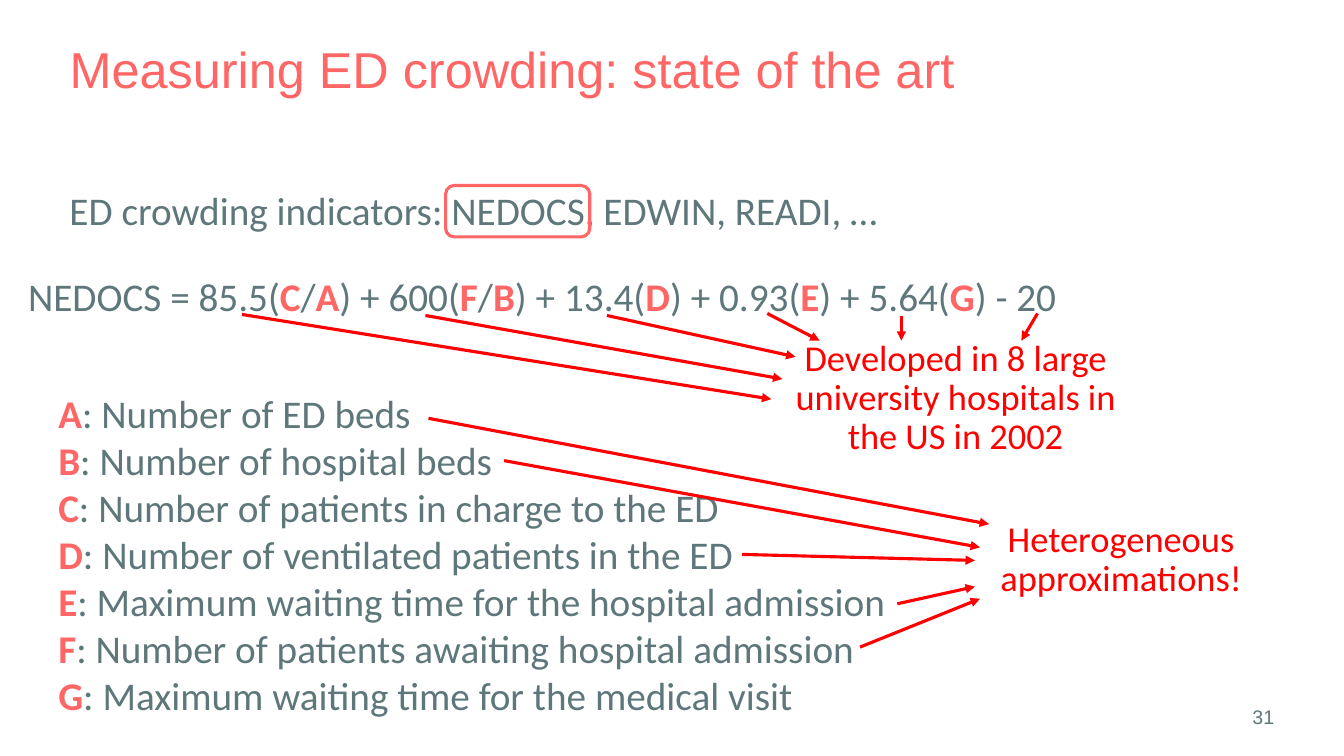
from lxml.etree import SubElement
from pptx import Presentation
from pptx.dml.color import RGBColor
from pptx.enum.shapes import MSO_CONNECTOR, MSO_SHAPE
from pptx.enum.text import MSO_ANCHOR, MSO_AUTO_SIZE, PP_ALIGN
from pptx.oxml.ns import qn
from pptx.util import Inches, Pt

CORAL = "FF6666"
SLATE = "5E777A"
RED = "FF0000"

INDICATORS = "ED crowding indicators: NEDOCS, EDWIN, READI, …"
FORMULA = (
    "NEDOCS = 85.5(*C*/*A*) + 600(*F*/*B*) + 13.4(*D*)"
    " + 0.93(*E*) + 5.64(*G*) - 20"
)
VARIABLES = {
    "A": "Number of ED beds",
    "B": "Number of hospital beds",
    "C": "Number of patients in charge to the ED",
    "D": "Number of ventilated patients in the ED",
    "E": "Maximum waiting time for the hospital admission",
    "F": "Number of patients awaiting hospital admission",
    "G": "Maximum waiting time for the medical visit",
}
COEFFICIENT_ARROWS = [
    ((-5.25, -0.2), (0, 0.64)),
    ((-3.43, -0.19), (0.11, 0.44)),
    ((-1.63, -0.19), (0.24, 0.22)),
    ((-0.04, -0.21), (0.48, 0.06)),
    ((1.29, -0.18), (1.29, 0.06)),
    ((2.64, -0.21), (2.48, 0.06)),
]
VARIABLE_ARROWS = [
    ((-5.42, -0.97), (0.14, 0.08)),
    ((-4.67, -0.55), (0.05, 0.31)),
    ((-2.31, 0.38), (0, 0.44)),
    ((-0.77, 0.87), (0, 0.7)),
    ((-1.14, 1.3), (0.05, 0.82)),
]


def colour(code):
    return RGBColor.from_string(code)


def write(box, text, size=28, font="Calibri", fill=SLATE, align=PP_ALIGN.LEFT, spacing=1.0):
    frame = box.text_frame
    frame.word_wrap = True
    frame.auto_size = MSO_AUTO_SIZE.NONE
    frame.vertical_anchor = MSO_ANCHOR.TOP
    for index, line in enumerate(text.split("\n")):
        para = frame.add_paragraph() if index else frame.paragraphs[0]
        para.alignment = align
        para.line_spacing = spacing
        for position, piece in enumerate(line.split("*")):
            if not piece:
                continue
            marked = position % 2 == 1
            span = para.add_run()
            span.text = piece
            span.font.name = font
            span.font.size = Pt(size)
            span.font.bold = marked
            span.font.color.rgb = colour(CORAL if marked else fill)


def add_text(page, area, text, **style):
    box = page.shapes.add_textbox(*map(Inches, area))
    write(box, text, **style)


def add_arrow(page, start, end):
    arrow = page.shapes.add_connector(
        MSO_CONNECTOR.STRAIGHT, *map(Inches, (*start, *end))
    )
    arrow.line.color.rgb = colour(RED)
    arrow.line.width = Pt(2.25)
    SubElement(arrow.line._get_or_add_ln(), qn("a:tailEnd"), type="triangle")
    SubElement(arrow._element.spPr, qn("a:effectLst"))


def add_title(page, area, text):
    title = page.shapes.title
    title.left, title.top, title.width, title.height = map(Inches, area)
    write(title, text, size=36, font="Arial", fill=CORAL, spacing=0.9)


def add_indicators(page, area):
    left, top = area[:2]
    add_text(page, area, INDICATORS, spacing=0.9)
    frame = page.shapes.add_shape(
        MSO_SHAPE.ROUNDED_RECTANGLE,
        *map(Inches, (left + 3.83, top - 0.01, 1.43, 0.51)),
    )
    frame.shadow.inherit = False
    frame.fill.background()
    frame.line.color.rgb = colour(CORAL)
    frame.line.width = Pt(2.25)


def add_variables(page, area):
    lines = [f"*{letter}*: {meaning}" for letter, meaning in VARIABLES.items()]
    add_text(page, area, "\n".join(lines))


def add_remark(page, area, text, arrows):
    left, top = area[:2]
    add_text(page, area, text, size=26, fill=RED, align=PP_ALIGN.CENTER, spacing=0.9)
    for start, end in arrows:
        add_arrow(page, *((left + x, top + y) for x, y in (start, end)))


def main():
    deck = Presentation()
    deck.slide_width = Inches(13.33)
    deck.slide_height = Inches(7.5)
    page = deck.slides.add_slide(deck.slide_layouts.get_by_name("Title Only"))
    add_title(page, (0.59, 0.4, 10.07, 1.45), "Measuring ED crowding: state of the art")
    add_indicators(page, (0.59, 1.85, 11.92, 0.6))
    add_text(page, (0.18, 2.65, 10.49, 0.57), FORMULA)
    add_variables(page, (0.48, 3.81, 9.13, 3.45))
    add_remark(
        page,
        (9.67, 5.12, 2.9, 0.89),
        "Heterogeneous approximations!",
        VARIABLE_ARROWS,
    )
    add_remark(
        page,
        (7.65, 3.32, 3.66, 1.28),
        "Developed in 8 large university hospitals in the US in 2002",
        COEFFICIENT_ARROWS,
    )
    add_text(
        page,
        (12.15, 6.94, 0.76, 0.34),
        "31",
        size=14,
        font="Arial",
        align=PP_ALIGN.CENTER,
    )
    deck.save("out.pptx")


if __name__ == "__main__":
    main()
